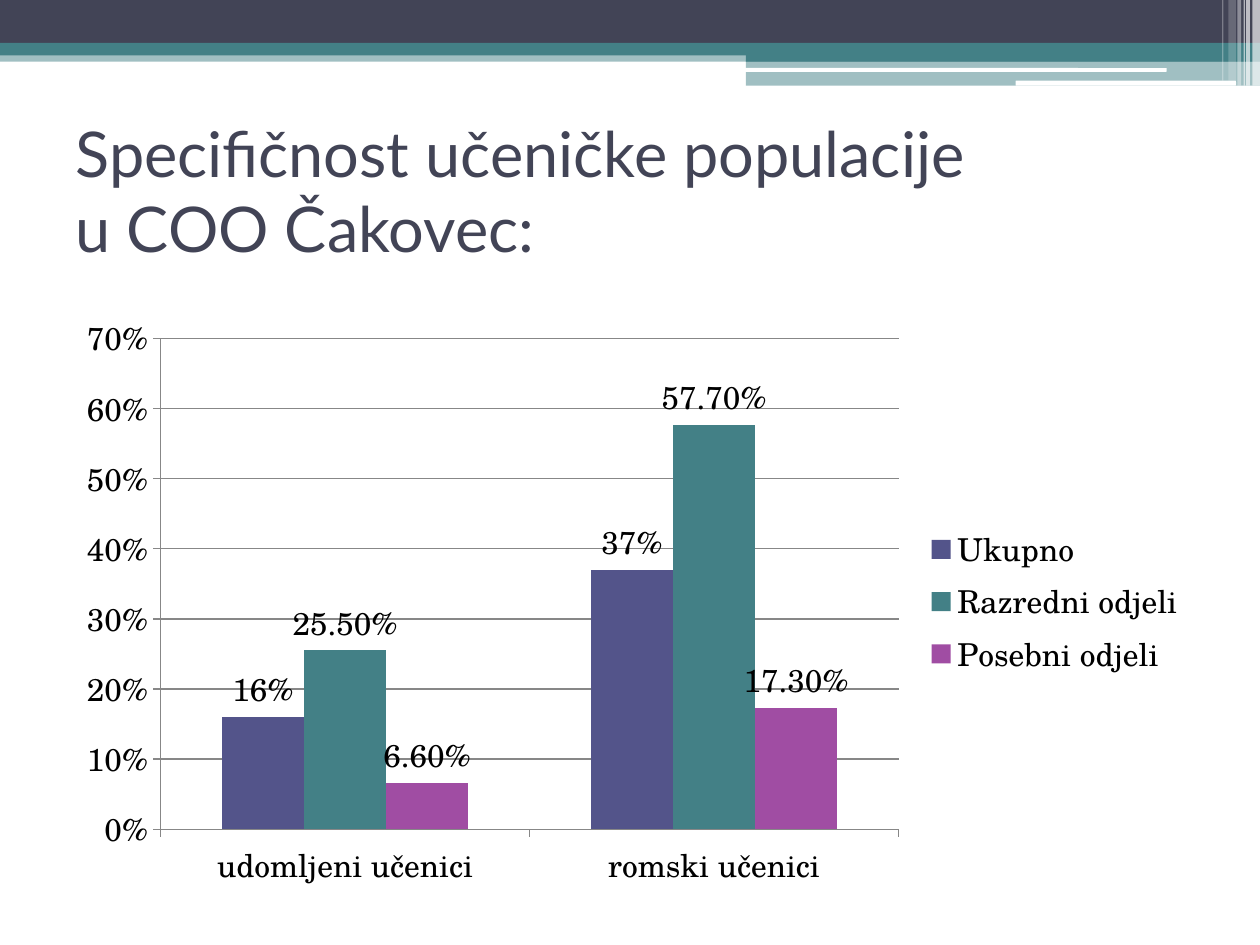
from lxml.etree import SubElement
from pptx import Presentation
from pptx.chart.data import CategoryChartData as ChartData
from pptx.dml.color import RGBColor
from pptx.enum.chart import XL_CHART_TYPE as Kind, XL_LABEL_POSITION as Spot
from pptx.enum.chart import XL_LEGEND_POSITION as Side, XL_TICK_MARK as Tick
from pptx.enum.shapes import MSO_SHAPE as Shape
from pptx.enum.text import MSO_ANCHOR as Anchor, MSO_AUTO_SIZE as Fit, PP_ALIGN as Align
from pptx.oxml.ns import qn
from pptx.util import Inches, Pt

COLORS = {
    "dark": "424456", "teal": "438086", "white": "FFFFFF", "black": "000000",
    "blue": "53548A", "plum": "A04DA3", "grey": "878787",
}
BANDS = [
    (0, 0.4, 10, 0.09, "teal", 50),
    (0, 0, 10, 0.34, "dark", 100),
    (0, 0.34, 10, 0.1, "teal", 100),
    (5.92, 0.39, 4.08, 0.1, "teal", 100),
    (5.92, 0.48, 4.08, 0.2, "teal", 50),
]
LINES = [(5.91, 0.54, 3.35, 0.03), (8.06, 0.64, 1.75, 0.04)]
STRIPES = [
    (9.94, 0.06, 0.68, 65), (9.89, 0.03, 0.68, 65), (9.87, 0.01, 0.68, 60),
    (9.82, 0.03, 0.68, 40), (9.75, 0.06, 0.64, 20), (9.7, 0.01, 0.64, 30),
]
TITLE = ["Specifičnost učeničke populacije ", "u COO Čakovec:"]
GROUPS = ["udomljeni učenici", "romski učenici"]
SERIES = [
    ("Ukupno", (0.16, 0.37), "blue", "0%"),
    ("Razredni odjeli", (0.255, 0.577), "teal", "0.00%"),
    ("Posebni odjeli", (0.066, 0.173), "plum", "0.00%"),
]


def rgb(name):
    """Return the named colour."""
    return RGBColor.from_string(COLORS[name])


def add_bar(slide, box, color, alpha=100, kind=Shape.RECTANGLE):
    """Draw one plain filled bar, see-through if alpha is below 100."""
    bar = slide.shapes.add_shape(kind, *map(Inches, box))
    bar.shadow.inherit = False
    bar.line.fill.background()
    bar.fill.solid()
    bar.fill.fore_color.rgb = rgb(color)
    if alpha < 100:
        tint = bar.fill._xPr.find(qn("a:solidFill"))[0]
        SubElement(tint, qn("a:alpha"), val=str(alpha * 1000))
    return bar


def add_header(slide):
    """Draw the bands, lines and stripes along the top edge."""
    for *box, color, alpha in BANDS:
        add_bar(slide, box, color, alpha)
    for box in LINES:
        line = add_bar(slide, box, "white", kind=Shape.ROUNDED_RECTANGLE)
        line.adjustments[0] = 0.17
    for left, width, height, alpha in STRIPES:
        add_bar(slide, (left, 0, width, height), "white", alpha)


def set_title(slide):
    """Place and fill the title."""
    title = slide.shapes.title
    title.left, title.top = Inches(0.5), Inches(0.92)
    title.width, title.height = Inches(9.5), Inches(1.17)
    frame = title.text_frame
    frame.auto_size = Fit.NONE
    frame.word_wrap = True
    frame.vertical_anchor = Anchor.MIDDLE
    para = frame.paragraphs[0]
    para.alignment = Align.LEFT
    for row, text in enumerate(TITLE):
        if row:
            para.add_line_break()
        run = para.add_run()
        run.text = text
        run.font.name, run.font.size = "Lato", Pt(36)
        run.font.color.rgb = rgb("dark")


def style_line(line):
    """Give an axis or grid line its thin grey look."""
    line.width = Pt(0.75)
    line.color.rgb = rgb("grey")


def style_axes(chart):
    """Set the scale, ticks and grid."""
    for axis in (chart.category_axis, chart.value_axis):
        axis.major_tick_mark = Tick.OUTSIDE
        axis.minor_tick_mark = Tick.NONE
        style_line(axis.format.line)
    axis = chart.value_axis
    axis.minimum_scale, axis.maximum_scale, axis.major_unit = 0, 0.7, 0.1
    axis.has_major_gridlines = True
    style_line(axis.major_gridlines.format.line)
    axis.tick_labels.number_format = "0%"
    axis.tick_labels.number_format_is_linked = False


def add_columns(slide):
    """Add the clustered column chart."""
    data = ChartData()
    data.categories = GROUPS
    for name, values, _, form in SERIES:
        data.add_series(name, values, form)
    box = map(Inches, (0.51, 2.41, 9, 4.73))
    chart = slide.shapes.add_chart(Kind.COLUMN_CLUSTERED, *box, data).chart
    chart.has_title = False
    chart.font.name, chart.font.size = "TeX Gyre Schola", Pt(18)
    chart.font.color.rgb = rgb("black")
    chart.has_legend = True
    chart.legend.position = Side.RIGHT
    chart.legend.include_in_layout = False
    style_axes(chart)
    plot = chart.plots[0]
    plot.gap_width, plot.overlap = 150, 0
    plot.vary_by_categories = False
    for series, (_, _, color, form) in zip(plot.series, SERIES):
        series.format.fill.solid()
        series.format.fill.fore_color.rgb = rgb(color)
        labels = series.data_labels
        labels.show_value = True
        labels.position = Spot.OUTSIDE_END
        labels.number_format = form
        labels.number_format_is_linked = False


def main():
    """Build and save the slide."""
    deck = Presentation()
    deck.slide_width, deck.slide_height = Inches(10), Inches(7.5)
    slide = deck.slides.add_slide(deck.slide_layouts[5])
    add_header(slide)
    set_title(slide)
    add_columns(slide)
    deck.save("out.pptx")


if __name__ == "__main__":
    main()
